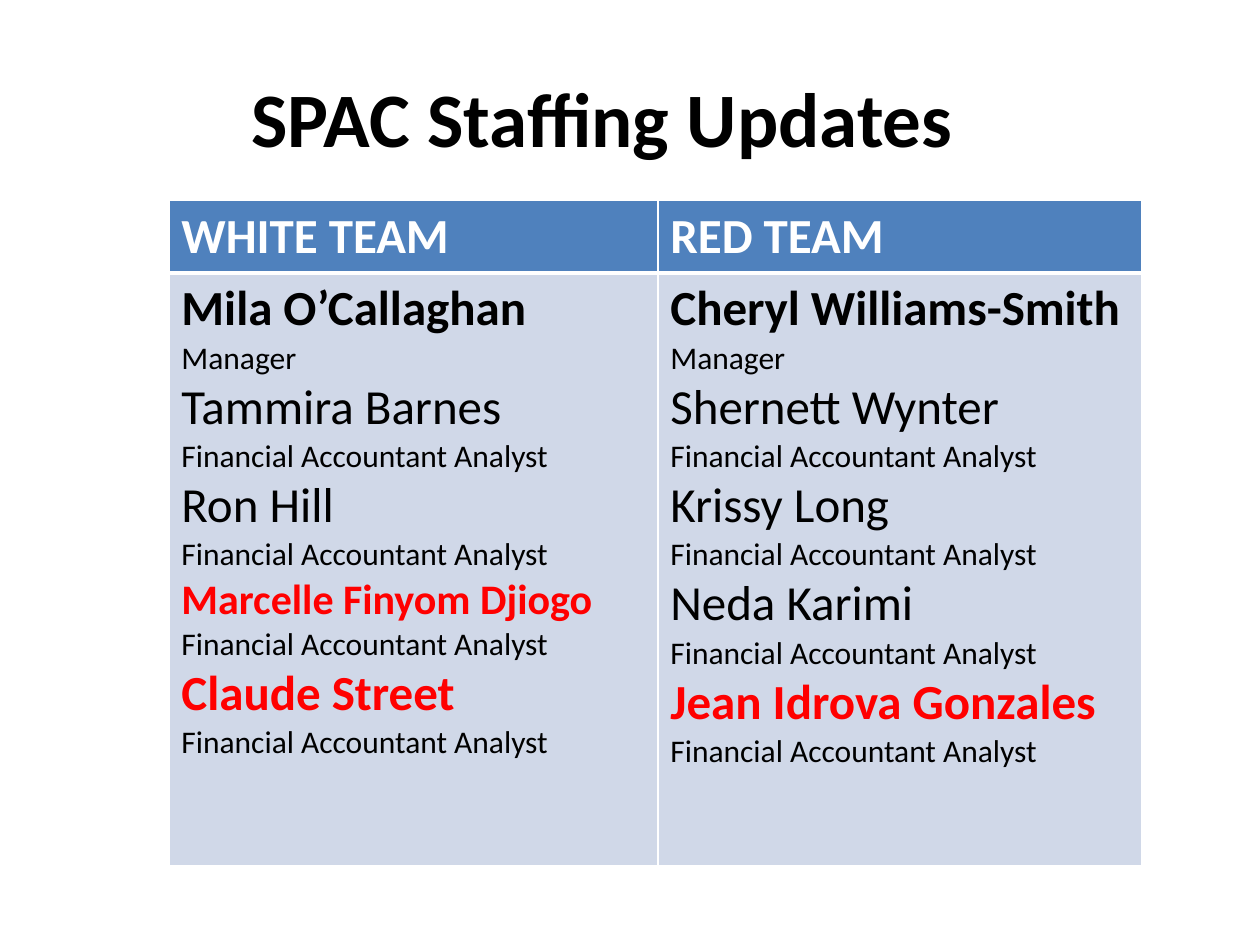
from dataclasses import dataclass

from lxml.etree import SubElement
from pptx import Presentation
from pptx.dml.color import RGBColor
from pptx.enum.text import MSO_ANCHOR, PP_ALIGN
from pptx.oxml.ns import qn
from pptx.util import Pt


@dataclass(frozen=True)
class Theme:
    font: str = "Calibri"
    title_size: int = 44
    name_size: int = 28
    long_name_size: int = 24
    role_size: int = 18
    black: str = "000000"
    white: str = "FFFFFF"
    red: str = "FF0000"
    header_fill: str = "4F81BD"
    body_fill: str = "D0D8E8"
    thin_line: int = 1
    thick_line: int = 3


THEME = Theme()
ANALYST = "Financial Accountant Analyst"

# Each member: name, role, and the look of the name
LEAD = (THEME.name_size, THEME.black, True)
STAFF = (THEME.name_size, THEME.black, False)
NEW = (THEME.name_size, THEME.red, True)
NEW_LONG = (THEME.long_name_size, THEME.red, True)
TEAMS = {
    "WHITE TEAM": [
        ("Mila O’Callaghan", "Manager", LEAD),
        ("Tammira Barnes", ANALYST, STAFF),
        ("Ron Hill", ANALYST, STAFF),
        ("Marcelle Finyom Djiogo", ANALYST, NEW_LONG),
        ("Claude Street", ANALYST, NEW),
    ],
    "RED TEAM": [
        ("Cheryl Williams-Smith", "Manager", LEAD),
        ("Shernett Wynter", ANALYST, STAFF),
        ("Krissy Long", ANALYST, STAFF),
        ("Neda Karimi", ANALYST, STAFF),
        ("Jean Idrova Gonzales", ANALYST, NEW),
    ],
}


def write_line(para, text, size, color, bold):
    para.text = text
    for span in para.runs:
        span.font.name = THEME.font
        span.font.size = Pt(size)
        span.font.bold = bold
        span.font.color.rgb = RGBColor.from_string(color)


def add_title(slide, text):
    box = slide.shapes.title
    box.left, box.top, box.width, box.height = Pt(36), Pt(21.6), Pt(648), Pt(90)
    frame = box.text_frame
    frame.vertical_anchor = MSO_ANCHOR.MIDDLE
    # The wide right inset sets the centred title a little to the left
    frame.margin_right = Pt(39)
    para = frame.paragraphs[0]
    para.alignment = PP_ALIGN.CENTER
    write_line(para, text, THEME.title_size, THEME.black, True)


def style_cell(cell, fill, top, bottom):
    properties = cell._tc.get_or_add_tcPr()
    widths = {"L": THEME.thin_line, "R": THEME.thin_line, "T": top, "B": bottom}
    for side, width in widths.items():
        line = SubElement(properties, qn(f"a:ln{side}"), w=str(Pt(width)))
        solid = SubElement(line, qn("a:solidFill"))
        SubElement(solid, qn("a:srgbClr"), val=THEME.white)
    cell.fill.solid()
    cell.fill.fore_color.rgb = RGBColor.from_string(fill)


def fill_cell(cell, lines):
    frame = cell.text_frame
    for index, line in enumerate(lines):
        para = frame.add_paragraph() if index else frame.paragraphs[0]
        write_line(para, *line)


def add_team_table(slide, teams):
    column_widths, row_heights = (279.4, 276.5), (41, 339)
    table = slide.shapes.add_table(
        len(row_heights), len(teams), Pt(96.5), Pt(114.5),
        Pt(sum(column_widths)), Pt(sum(row_heights)),
    ).table
    for row, height in zip(table.rows, row_heights):
        row.height = Pt(height)

    for index, (team, members) in enumerate(teams.items()):
        table.columns[index].width = Pt(column_widths[index])
        header, body = table.cell(0, index), table.cell(1, index)
        style_cell(header, THEME.header_fill, THEME.thin_line, THEME.thick_line)
        style_cell(body, THEME.body_fill, THEME.thick_line, THEME.thin_line)
        fill_cell(header, [(team, THEME.name_size, THEME.white, True)])
        lines = []
        for name, role, look in members:
            lines.append((name, *look))
            lines.append((role, THEME.role_size, THEME.black, False))
        fill_cell(body, lines)


def main():
    deck = Presentation()
    deck.slide_width, deck.slide_height = Pt(720), Pt(540)
    # Title-only layout
    slide = deck.slides.add_slide(deck.slide_layouts[5])
    add_title(slide, "SPAC Staffing Updates")
    add_team_table(slide, TEAMS)
    deck.save("out.pptx")


if __name__ == "__main__":
    main()
